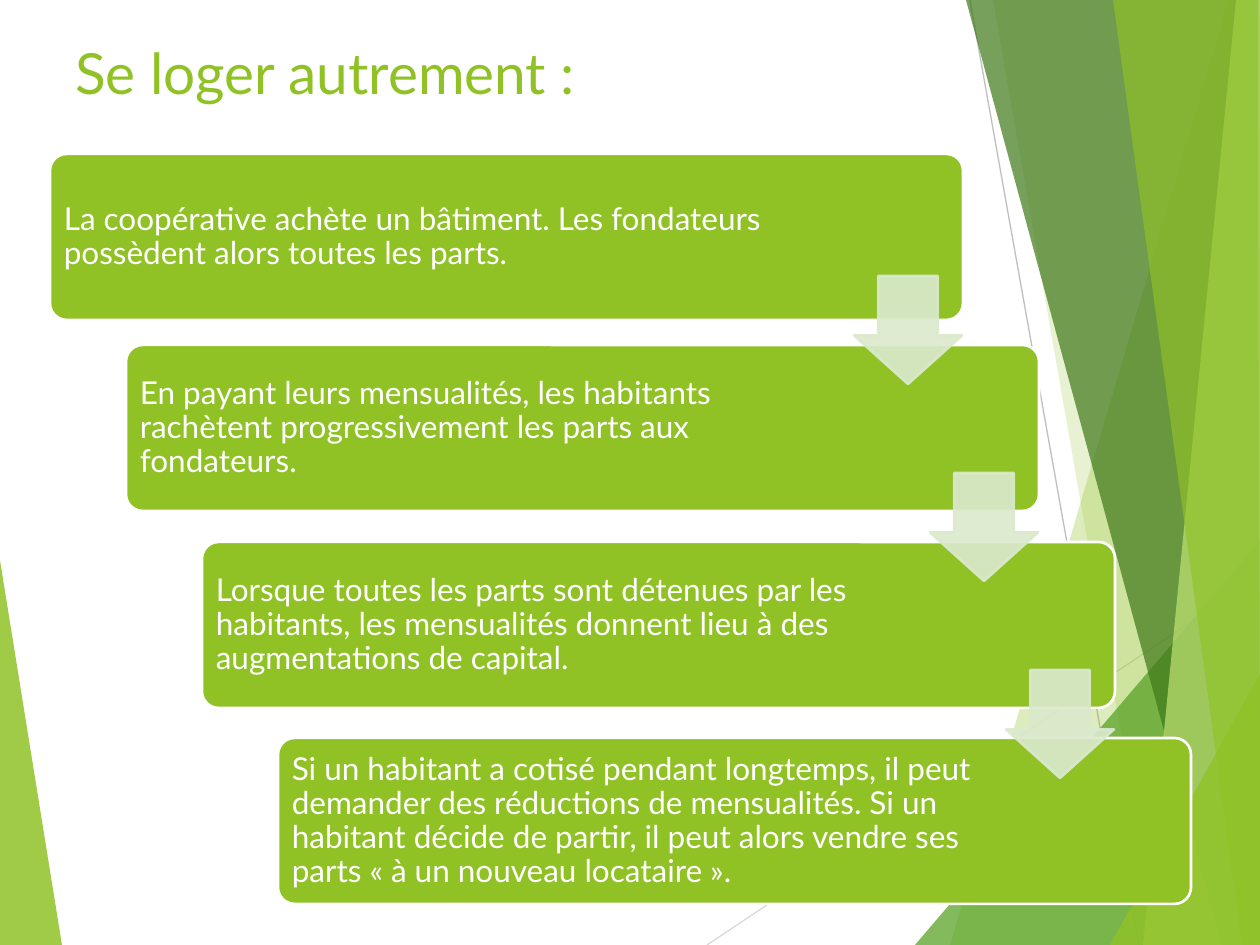
from dataclasses import dataclass

from lxml import etree
from pptx import Presentation
from pptx import util as u
from pptx.dml.color import RGBColor
from pptx.enum import shapes, text
from pptx.oxml.ns import qn

SCALE = 914400 / 126


def px(n):
    return u.Emu(round(n * SCALE))


@dataclass(frozen=True)
class Theme:
    font: str = "Lato"
    lime: str = "90C226"
    leaf: str = "54A021"
    moss: str = "3F7819"
    pale: str = "C0E474"
    mint: str = "DBE9CD"
    white: str = "FFFFFF"
    silver: str = "D9D9D9"
    grey: str = "BFBFBF"
    title: float = 32.4
    body: float = 18
    edge: float = 1.5
    hair: float = 0.75


class Deck:
    def __init__(self, theme, slide):
        self.theme = theme
        self.items = slide.shapes

    def tint(self, fill, color, alpha=100):
        fill.solid()
        fill.fore_color.rgb = RGBColor.from_string(color)
        if alpha < 100:
            node = fill._xPr.find(qn("a:solidFill"))[0]
            etree.SubElement(node, qn("a:alpha"), val=str(alpha * 1000))

    def label(self, frame, words, size, color):
        frame.word_wrap = True
        para = frame.paragraphs[0]
        para.text = words
        para.alignment = text.PP_ALIGN.LEFT
        para.font.name = self.theme.font
        para.font.size = u.Pt(size)
        para.font.color.rgb = RGBColor.from_string(color)
        return para

    def facet(self, points, color, alpha):
        form = self.items.build_freeform(*points[0], scale=SCALE)
        form.add_line_segments(points[1:], close=True)
        shape = form.convert_to_shape()
        shape.shadow.inherit = False
        shape.line.fill.background()
        self.tint(shape.fill, color, alpha)

    def rule(self, start, end, color):
        ends = [px(n) for n in (*start, *end)]
        line = self.items.add_connector(shapes.MSO_CONNECTOR.STRAIGHT, *ends)
        line.line.width = u.Pt(self.theme.hair)
        self.tint(line.line.fill, color)
        etree.SubElement(line._element.spPr, qn("a:effectLst"))

    def title(self, words, box):
        shape = self.items.add_textbox(*map(px, box))
        self.label(shape.text_frame, words, self.theme.title, self.theme.lime)

    def block(self, kind, box, adjust, fill, edge, alpha=100):
        shape = self.items.add_shape(kind, *map(px, box))
        shape.shadow.inherit = False
        for i, value in enumerate(adjust):
            shape.adjustments[i] = value
        self.tint(shape.fill, fill, alpha)
        shape.line.width = u.Pt(self.theme.edge)
        self.tint(shape.line.fill, edge, alpha)
        return shape

    def step(self, words, box):
        kind = shapes.MSO_SHAPE.ROUNDED_RECTANGLE
        shape = self.block(kind, box, [0.1], self.theme.lime, self.theme.white)
        frame = shape.text_frame
        frame.margin_left = frame.margin_top = frame.margin_bottom = px(9)
        frame.margin_right = px(193)
        frame.vertical_anchor = text.MSO_ANCHOR.MIDDLE
        para = self.label(frame, words, self.theme.body, self.theme.white)
        para.line_spacing = 0.9

    def arrow(self, box):
        kind = shapes.MSO_SHAPE.DOWN_ARROW
        mint = self.theme.mint
        self.block(kind, box, [0.55, 0.45], mint, mint, 90)


STEPS = [
    (154, "La coopérative achète un bâtiment. Les fondateurs possèdent alors "
          "toutes les parts."),
    (345, "En payant leurs mensualités, les habitants rachètent "
          "progressivement les parts aux fondateurs."),
    (542, "Lorsque toutes les parts sont détenues par les habitants, les "
          "mensualités donnent lieu à des augmentations de capital."),
    (738, "Si un habitant a cotisé pendant longtemps, il peut demander des "
          "réductions de mensualités. Si un habitant décide de partir, il "
          "peut alors vendre ses parts « à un nouveau locataire »."),
]


def main():
    show = Presentation()
    show.slide_width, show.slide_height = px(1260), px(945)
    theme = Theme()
    deck = Deck(theme, show.slides.add_slide(show.slide_layouts[6]))

    deck.facet([(0, 560), (62, 945), (0, 945)], theme.lime, 85)
    deck.rule((707, 945), (1260, 576), theme.silver)
    deck.rule((970, 0), (1139, 945), theme.grey)

    right = [(1260, 945), (1260, 0)]
    facets = [
        ([(1229, 0), (950, 945), *right], theme.lime, 30),
        ([(993, 0), (1158, 945), *right], theme.lime, 20),
        ([(915, 945), (1260, 541), (1260, 945)], theme.leaf, 72),
        ([(966, 0), (1222, 945), *right], theme.moss, 70),
        ([(1236, 0), (1143, 945), *right], theme.pale, 70),
        ([(1113, 0), (1242, 945), (1260, 945), (1258, 0)], theme.lime, 65),
        ([(1110, 945), (1260, 674), (1260, 945)], theme.lime, 80),
    ]
    for points, color, alpha in facets:
        deck.facet(points, color, alpha)

    deck.title("Se loger autrement :", (63, 32, 1029, 77))
    for i, (top, words) in enumerate(STEPS):
        deck.step(words, (50 + 76 * i, top, 913, 166))
    for i in range(len(STEPS) - 1):
        deck.arrow((854 + 76 * i, 276 + 197 * i, 108, 108))

    show.save("out.pptx")


if __name__ == "__main__":
    main()
